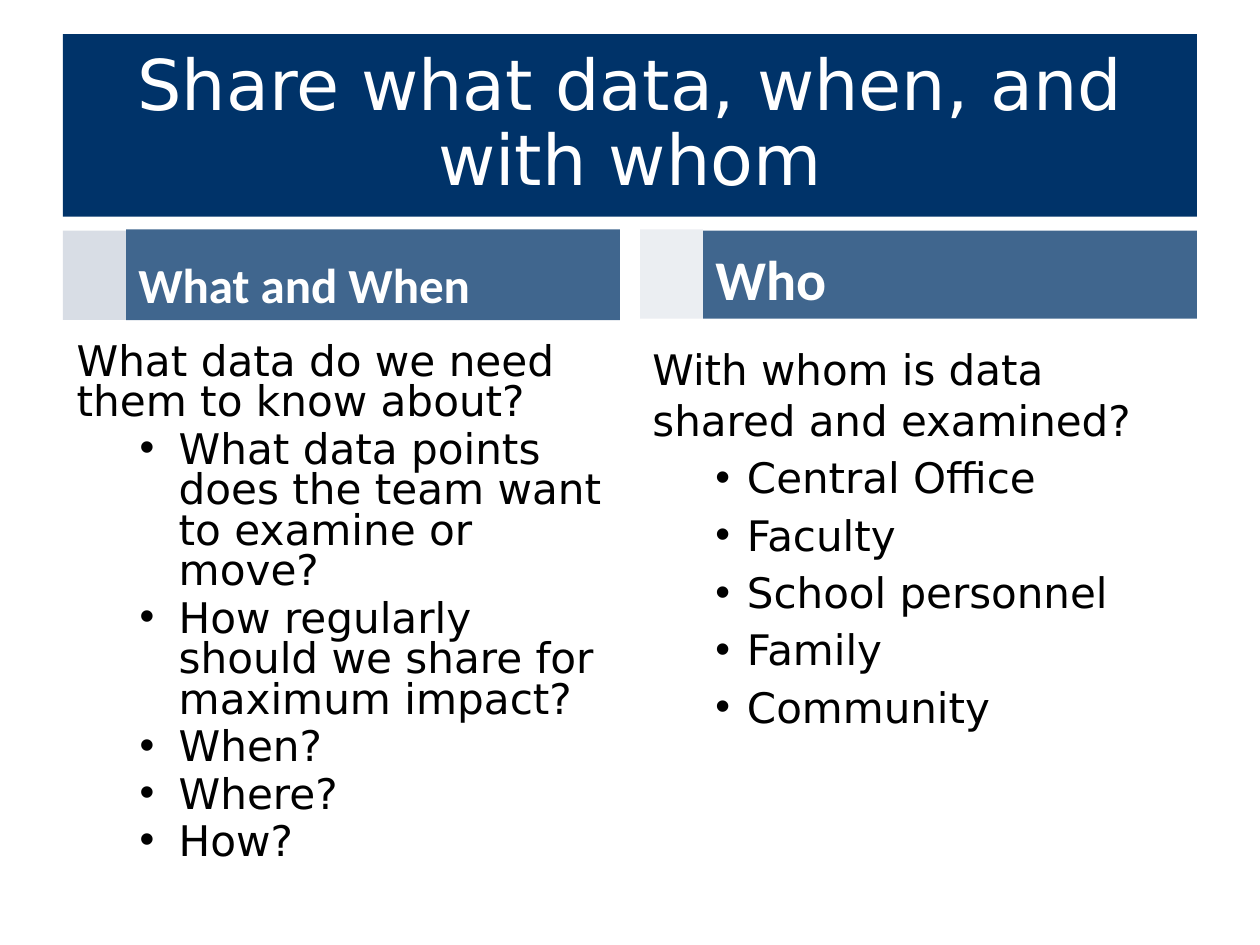
from lxml import etree
from pptx import Presentation
from pptx.dml.color import RGBColor
from pptx.enum.shapes import MSO_SHAPE
from pptx.enum.text import MSO_ANCHOR, PP_ALIGN
from pptx.oxml.ns import qn
from pptx.util import Inches, Pt

NAVY = RGBColor(0x00, 0x33, 0x69)
PALE = RGBColor(0xD8, 0xDD, 0xE5)
WHITE = RGBColor(0xFF, 0xFF, 0xFF)
BLACK = RGBColor(0x00, 0x00, 0x00)
BODY_FONT, HEADING_FONT = "DejaVu Sans", "Calibri"

# Content
TITLE = "Share what data, when, and with whom"
COLUMNS = [
    {
        "heading": "What and When", "heading_size": 28,
        "accent_box": (0.5, 1.83, 0.5, 0.71), "accent_opacity": 100,
        "heading_box": (1, 1.82, 3.92, 0.72),
        "body_box": (0.51, 2.68, 4.42, 4.45),
        "size": 24.1, "line_spacing": 0.8, "indent": (0.81, -0.31),
        "question": "What data do we need them to know about?",
        "bullets": ["What data points does the team want to examine or move?",
                    "How regularly should we share for maximum impact?",
                    "When?", "Where?", "How?"],
    },
    {
        "heading": "Who", "heading_size": 32,
        "accent_box": (5.08, 1.82, 0.5, 0.71), "accent_opacity": 49,
        "heading_box": (5.58, 1.83, 3.92, 0.7),
        "body_box": (5.08, 2.68, 4.42, 4.02),
        "size": 24, "line_spacing": 1.0, "indent": (0.75, -0.25),
        "question": "With whom is data shared and examined?",
        "bullets": ["Central Office", "Faculty", "School personnel",
                    "Family", "Community"],
    },
]


def add_bar(slide, box, color, opacity=100):
    shape = slide.shapes.add_shape(MSO_SHAPE.RECTANGLE, *map(Inches, box))
    shape.shadow.inherit = False
    shape.fill.solid()
    shape.fill.fore_color.rgb = color
    shape.line.fill.background()
    if opacity < 100:
        color_element = shape.fill._xPr.find(qn("a:solidFill"))[0]
        etree.SubElement(color_element, qn("a:alpha"), val=str(opacity * 1000))
    return shape


def format_paragraph(paragraph, font, size, color, spacing, bold=False):
    paragraph.line_spacing = spacing
    paragraph.font.name = font
    paragraph.font.size = Pt(size)
    paragraph.font.color.rgb = color
    paragraph.font.bold = bold
    for run in paragraph.runs:
        run.font.name = font
        run.font.size = Pt(size)
        run.font.color.rgb = color
        run.font.bold = bold


def add_label(slide, box, text, anchor, align, font, size, bold=False, opacity=100):
    text_frame = add_bar(slide, box, NAVY, opacity).text_frame
    text_frame.word_wrap = True
    text_frame.vertical_anchor = anchor
    text_frame.text = text
    paragraph = text_frame.paragraphs[0]
    paragraph.alignment = align
    format_paragraph(paragraph, font, size, WHITE, 0.9, bold)


def make_bullet(paragraph, margin, hanging):
    properties = paragraph._p.get_or_add_pPr()
    properties.set("marL", str(Inches(margin)))
    properties.set("indent", str(Inches(hanging)))
    paragraph.level = 1
    paragraph.space_before = Pt(4)
    etree.SubElement(properties, qn("a:buFont"), typeface="Arial")
    etree.SubElement(properties, qn("a:buChar"), char="•")


def add_body(slide, column):
    text_box = slide.shapes.add_textbox(*map(Inches, column["body_box"]))
    text_frame = text_box.text_frame
    text_frame.word_wrap = True
    text_frame.text = "\n".join([column["question"], *column["bullets"]])
    for index, paragraph in enumerate(text_frame.paragraphs):
        if index:
            make_bullet(paragraph, *column["indent"])
        format_paragraph(paragraph, BODY_FONT, column["size"], BLACK,
                         column["line_spacing"])


def main():
    presentation = Presentation()
    presentation.slide_width, presentation.slide_height = Inches(10), Inches(7.5)
    slide = presentation.slides.add_slide(presentation.slide_layouts[6])

    # Title band
    add_label(slide, (0.5, 0.27, 9, 1.45), TITLE, MSO_ANCHOR.MIDDLE,
              PP_ALIGN.CENTER, BODY_FONT, 40)

    # Two columns: accent block, heading bar, question with bullets
    for column in COLUMNS:
        add_bar(slide, column["accent_box"], PALE, column["accent_opacity"])
        add_label(slide, column["heading_box"], column["heading"],
                  MSO_ANCHOR.BOTTOM, PP_ALIGN.LEFT, HEADING_FONT,
                  column["heading_size"], bold=True, opacity=75)
        add_body(slide, column)

    presentation.save("out.pptx")


if __name__ == "__main__":
    main()
